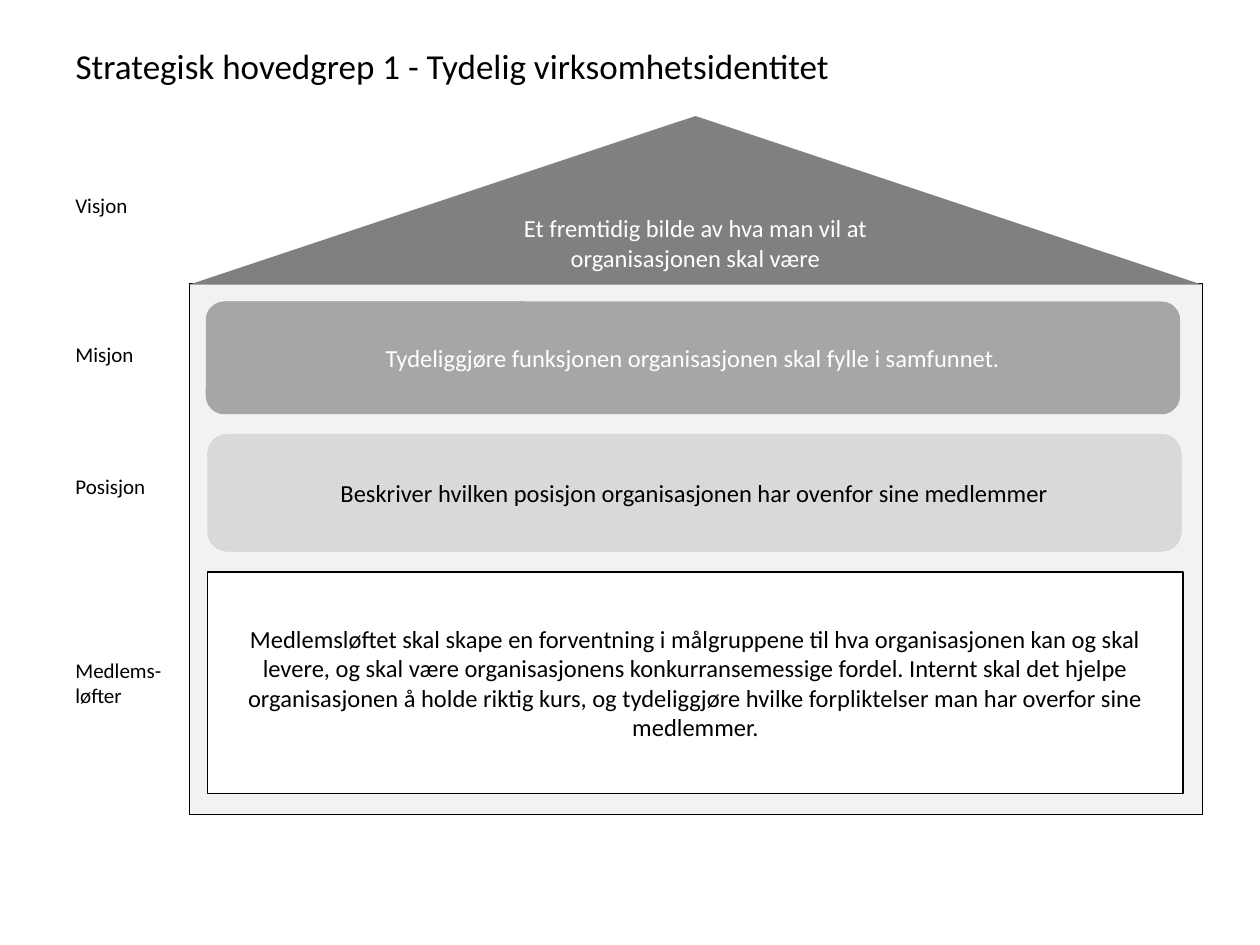
import pptx
import pptx.util
from pptx.dml.color import RGBColor
from pptx.enum.shapes import MSO_SHAPE
from pptx.enum.text import MSO_ANCHOR, MSO_AUTO_SIZE, PP_ALIGN
from pptx.util import Cm


class Theme:
    font = "Calibri"
    black, white = "000000", "FFFFFF"
    roof, mission, place, wall = "808080", "A6A6A6", "D9D9D9", "F2F2F2"
    title, body, label = 20, 14, 12
    thin, line = 0.25, 0.75


# Shared edges, in cm
LEFT, WALL, WIDTH, INNER = 1.27, 3.81, 20.42, 19.66

# Row labels: text, top, width, height
LABELS = [
    ("Visjon", 3.76, 3.35, 0.76),
    ("Misjon", 6.76, 3.35, 0.76),
    ("Posisjon", 9.42, 3.35, 0.76),
    ("Medlems-\nløfter", 13.13, 2.39, 1.27),
]


def write(frame, text, size, color, align=PP_ALIGN.LEFT):
    frame.word_wrap = True
    frame.text = text
    for para in frame.paragraphs:
        para.alignment = align
        para.font.name = Theme.font
        para.font.size = pptx.util.Pt(size)
        para.font.color.rgb = RGBColor.from_string(color)


def add_title(slide, text):
    title = slide.shapes.title
    title.left, title.top = Cm(LEFT), Cm(0.76)
    title.width, title.height = Cm(19.02), Cm(1.55)
    frame = title.text_frame
    write(frame, text, Theme.title, Theme.black)
    frame.vertical_anchor = MSO_ANCHOR.TOP
    frame.auto_size = MSO_AUTO_SIZE.NONE


def add_block(slide, kind, box, fill, line=None, width=Theme.thin,
              text="", color=Theme.black):
    block = slide.shapes.add_shape(kind, *map(Cm, box))
    block.shadow.inherit = False
    block.fill.solid()
    block.fill.fore_color.rgb = RGBColor.from_string(fill)
    if line:
        block.line.color.rgb = RGBColor.from_string(line)
        block.line.width = pptx.util.Pt(width)
    else:
        block.line.fill.background()
    if text:
        write(block.text_frame, text, Theme.body, color, PP_ALIGN.CENTER)
        block.text_frame.vertical_anchor = MSO_ANCHOR.MIDDLE
    return block


def add_label(slide, text, top, width, height):
    box = slide.shapes.add_textbox(Cm(LEFT), Cm(top), Cm(width), Cm(height))
    write(box.text_frame, text, Theme.label, Theme.black)
    box.text_frame.auto_size = MSO_AUTO_SIZE.SHAPE_TO_FIT_TEXT


def main():
    deck = pptx.Presentation()
    deck.slide_width, deck.slide_height = Cm(25.4), Cm(19.05)
    slide = deck.slides.add_slide(deck.slide_layouts[5])
    add_title(slide, "Strategisk hovedgrep 1 - Tydelig virksomhetsidentitet")

    # House wall and roof
    add_block(slide, MSO_SHAPE.RECTANGLE, (WALL, 5.72, WIDTH, 10.69),
              Theme.wall, Theme.black)
    roof = add_block(
        slide, MSO_SHAPE.ISOSCELES_TRIANGLE, (WALL, 2.34, WIDTH, 3.4),
        Theme.roof, color=Theme.white,
        text="Et fremtidig bilde av hva man vil at "
             "organisasjonen skal være")
    roof.adjustments[0] = 0.5

    # Floors of the house
    add_block(slide, MSO_SHAPE.ROUNDED_RECTANGLE, (4.14, 6.07, INNER, 2.29),
              Theme.mission, Theme.white, color=Theme.white,
              text="Tydeliggjøre funksjonen organisasjonen skal fylle "
                   "i samfunnet.")
    add_block(slide, MSO_SHAPE.ROUNDED_RECTANGLE, (4.17, 8.74, INNER, 2.39),
              Theme.place, Theme.white,
              text="Beskriver hvilken posisjon organisasjonen har ovenfor "
                   "sine medlemmer")
    add_block(slide, MSO_SHAPE.RECTANGLE, (4.19, 11.53, INNER, 4.47),
              Theme.white, Theme.black, Theme.line,
              text="Medlemsløftet skal skape en forventning i målgruppene "
                   "til hva organisasjonen kan og skal levere, og skal være "
                   "organisasjonens konkurransemessige fordel. Internt skal "
                   "det hjelpe organisasjonen å holde riktig kurs, og "
                   "tydeliggjøre hvilke forpliktelser man har overfor sine "
                   "medlemmer.")

    # Row labels
    for row in LABELS:
        add_label(slide, *row)

    deck.save("out.pptx")


if __name__ == "__main__":
    main()
